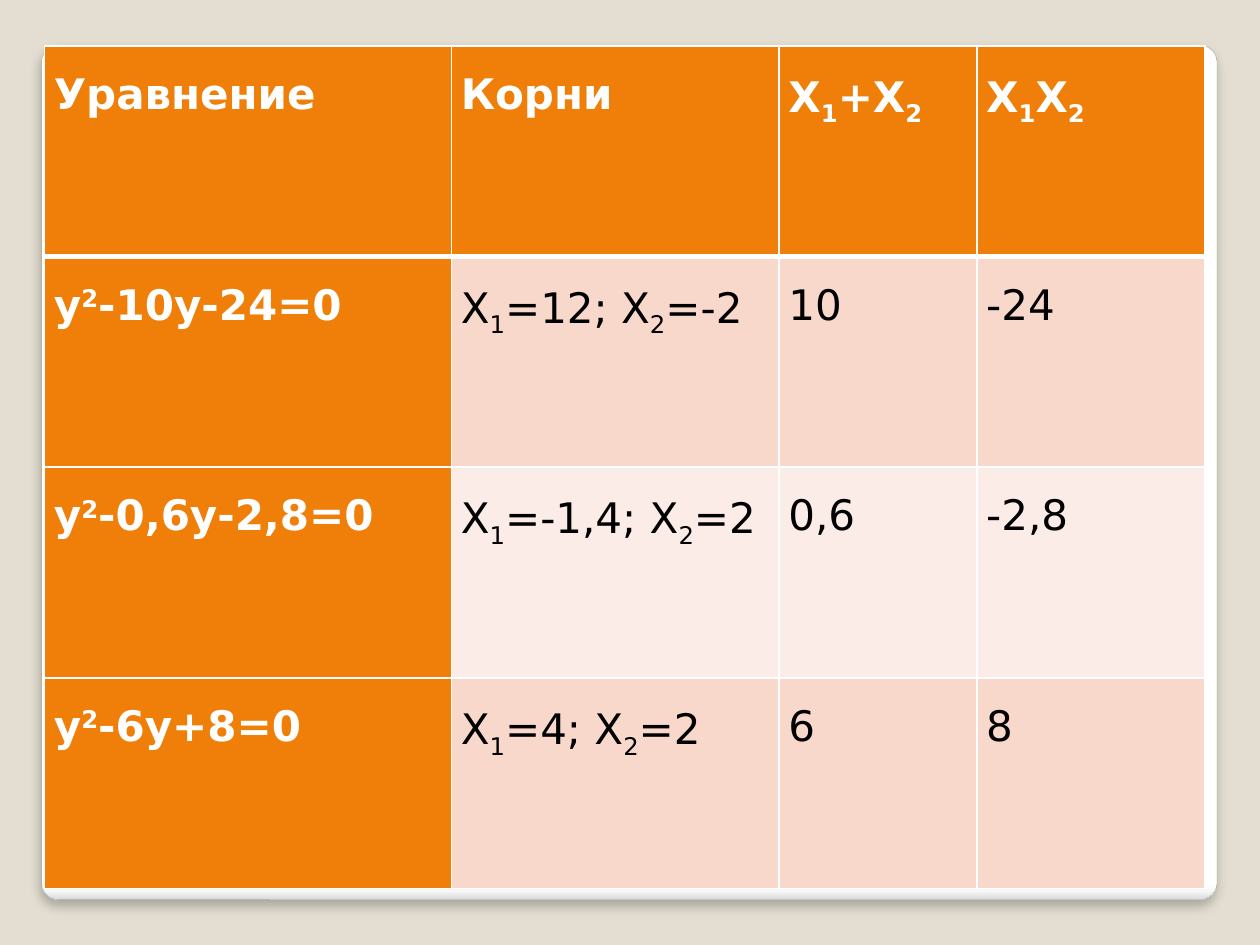
import pptx
import pptx.dml.color
import pptx.enum.shapes
import pptx.enum.text
import pptx.oxml
import pptx.oxml.ns
import pptx.util
from lxml import etree

Pt = pptx.util.Pt
RGBColor = pptx.dml.color.RGBColor
qn = pptx.oxml.ns.qn

BACKGROUND = RGBColor(0xE3, 0xDE, 0xD1)
PANEL_LINE = RGBColor(0xA4, 0xA4, 0xA4)
WHITE = RGBColor(0xFF, 0xFF, 0xFF)
BLACK = RGBColor(0x00, 0x00, 0x00)
ORANGE = RGBColor(0xF0, 0x7F, 0x09)
DARK_BAND = RGBColor(0xF9, 0xD8, 0xCC)
LIGHT_BAND = RGBColor(0xFC, 0xEC, 0xE7)
PANEL_STOPS = [
    (0, WHITE),
    (98, WHITE),
    (99, RGBColor(0xF7, 0xF7, 0xF7)),
    (100, RGBColor(0xDA, 0xDA, 0xDA)),
]

FONT_NAME = "DejaVu Sans"
COLUMN_WIDTHS = [232.56, 187.2, 113.04, 130.32]
ROW_HEIGHT = 120.4
BASELINES = {"_": "-25000", "^": "30000"}
EQUATION_ROWS = [
    ["Уравнение", "Корни", "Х|_1|+Х|_2", "Х|_1|Х|_2"],
    ["у|^2|-10у-24=0", "Х|_1|=12; Х|_2|=-2", "10", "-24"],
    ["у|^2|-0,6у-2,8=0", "Х|_1|=-1,4; Х|_2|=2", "0,6", "-2,8"],
    ["у|^2|-6у+8=0", "Х|_1|=4; Х|_2|=2", "6", "8"],
]


def add_color(parent, color):
    return etree.SubElement(parent, qn("a:srgbClr"), val=str(color))


def set_gradient(shape, stops):
    shape.fill.gradient()
    shape.fill.gradient_angle = 270
    stop_list = shape._element.spPr.find(".//" + qn("a:gsLst"))
    for old_stop in list(stop_list):
        stop_list.remove(old_stop)
    for position, color in stops:
        stop = etree.SubElement(stop_list, qn("a:gs"), pos=str(position * 1000))
        add_color(stop, color)


def set_shadow(shape):
    shape.shadow.inherit = False
    effects = shape._element.spPr.find(qn("a:effectLst"))
    shadow = etree.SubElement(
        effects, qn("a:outerShdw"), blurRad=str(Pt(6)), dist=str(Pt(4)),
        dir="5400000", algn="tl", rotWithShape="0",
    )
    etree.SubElement(add_color(shadow, BLACK), qn("a:alpha"), val="25000")


def add_panel(slide):
    panel = slide.shapes.add_shape(
        pptx.enum.shapes.MSO_SHAPE.ROUNDED_RECTANGLE,
        Pt(23.76), Pt(25.92), Pt(671.76), Pt(488.16),
    )
    panel.adjustments[0] = 0.02
    set_gradient(panel, PANEL_STOPS)
    panel.line.color.rgb = PANEL_LINE
    panel.line.width = Pt(0.16)
    set_shadow(panel)


def set_borders(cell, row_index):
    properties = cell._tc.get_or_add_tcPr()
    widths = {"L": 1, "R": 1, "T": 3 if row_index == 1 else 1, "B": 3 if row_index == 0 else 1}
    for side, width in widths.items():
        line = etree.SubElement(properties, qn("a:ln" + side), w=str(Pt(width)))
        add_color(etree.SubElement(line, qn("a:solidFill")), WHITE)


def write_formula(paragraph, formula, color, bold):
    paragraph.alignment = pptx.enum.text.PP_ALIGN.JUSTIFY
    paragraph.line_spacing = 1.5
    for piece in formula.split("|"):
        run = paragraph.add_run()
        run.text = piece.lstrip("_^")
        run.font.name = FONT_NAME
        run.font.size = Pt(24)
        run.font.bold = bold
        run.font.color.rgb = color
        if piece[0] in BASELINES:
            run.font._element.set("baseline", BASELINES[piece[0]])


def fill_cell(cell, formula, row_index, column_index):
    is_heading = row_index == 0 or column_index == 0
    band = DARK_BAND if row_index % 2 else LIGHT_BAND
    set_borders(cell, row_index)
    cell.fill.solid()
    cell.fill.fore_color.rgb = ORANGE if is_heading else band
    cell.margin_left = cell.margin_right = Pt(5.4)
    cell.margin_top = cell.margin_bottom = Pt(0)
    text_color = WHITE if is_heading else BLACK
    write_formula(cell.text_frame.paragraphs[0], formula, text_color, is_heading)


def add_equation_table(slide):
    table = slide.shapes.add_table(
        len(EQUATION_ROWS), len(COLUMN_WIDTHS), Pt(25.4), Pt(26.2),
        Pt(sum(COLUMN_WIDTHS)), Pt(ROW_HEIGHT * len(EQUATION_ROWS)),
    ).table
    for column, width in zip(table.columns, COLUMN_WIDTHS):
        column.width = Pt(width)
    for row_index, formulas in enumerate(EQUATION_ROWS):
        table.rows[row_index].height = Pt(ROW_HEIGHT)
        for column_index, formula in enumerate(formulas):
            fill_cell(table.cell(row_index, column_index), formula, row_index, column_index)


def main():
    presentation = pptx.Presentation()
    presentation.slide_width = Pt(720)
    presentation.slide_height = Pt(540)
    slide = presentation.slides.add_slide(presentation.slide_layouts[6])
    slide.background.fill.solid()
    slide.background.fill.fore_color.rgb = BACKGROUND
    add_panel(slide)
    add_equation_table(slide)
    presentation.save("out.pptx")


if __name__ == "__main__":
    main()
